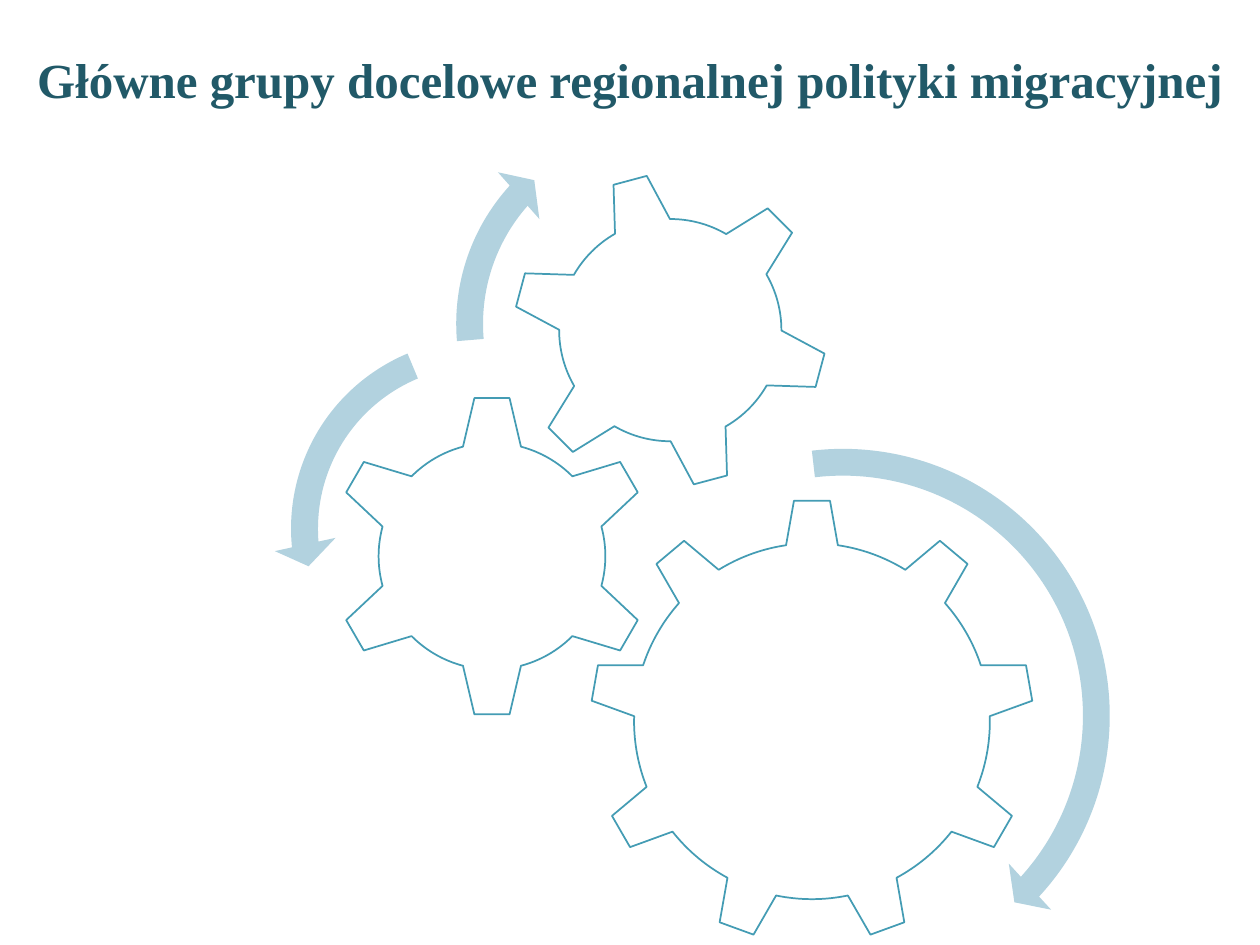
from pptx import Presentation
from pptx.dml.color import RGBColor
from pptx.enum.shapes import MSO_SHAPE
from pptx.enum.text import MSO_ANCHOR, PP_ALIGN
from pptx.util import Inches, Pt

SLIDE_W, SLIDE_H = Inches(10), Inches(7.5)
COLUMN = SLIDE_W / 100  # square grid: 100 columns by 75 rows

TITLE_COLOUR = "215968"
GEAR_FILL, GEAR_EDGE = "FFFFFF", "449CB4"
ARROW_FILL = "B2D2DF"

# Preset, left and top within the wheelwork, size, rotation
GEARS = [
    (MSO_SHAPE.GEAR_9, 25.1, 31.6, 35.3, 0),
    (MSO_SHAPE.GEAR_6, 4.5, 23.3, 25.7, 0),
    (MSO_SHAPE.GEAR_6, 18.9, 5.6, 25.2, -15),
]
# Preset, left and top within the wheelwork, size, adjustments
ARROWS = [
    (MSO_SHAPE.CIRCULAR_ARROW, 22.6, 26.2, 45.2,
     (0.047, 2.99, 25.46, 157.99, 0.055)),
    (MSO_SHAPE.LEFT_CIRCULAR_ARROW, 0, 17.5, 32.9,
     (0.065, 4.3, 104.89, 148.38, 0.075)),
    (MSO_SHAPE.CIRCULAR_ARROW, 13.1, 0, 35.4,
     (0.06, 3.94, 133.14, 105.08, 0.07)),
]


def colour(hex_code):
    return RGBColor.from_string(hex_code)


def grid(*lengths):
    return [round(length * COLUMN) for length in lengths]


def add_title(slide, left, top, width, height):
    title = slide.shapes.add_textbox(*grid(left, top, width, height))
    frame = title.text_frame
    frame.word_wrap = True
    frame.vertical_anchor = MSO_ANCHOR.MIDDLE
    heading = frame.paragraphs[0]
    heading.text = "Główne grupy docelowe regionalnej polityki migracyjnej"
    heading.alignment = PP_ALIGN.CENTER
    heading.font.name = "Times New Roman"
    heading.font.size = Pt(28)
    heading.font.bold = True
    heading.font.color.rgb = colour(TITLE_COLOUR)


def add_part(slide, preset, left, top, size, fill, edge=None):
    part = slide.shapes.add_shape(preset, *grid(left, top, size, size))
    part.shadow.inherit = False
    part.fill.solid()
    part.fill.fore_color.rgb = colour(fill)
    if edge:
        part.line.color.rgb = colour(edge)
        part.line.width = Pt(1)
    else:
        part.line.fill.background()
    return part


def add_wheelwork(slide, left, top):
    # Interlocking gears
    for preset, x, y, size, rotation in GEARS:
        gear = add_part(slide, preset, left + x, top + y, size, GEAR_FILL, GEAR_EDGE)
        gear.rotation = rotation
    # Arrows showing the direction of turn
    for preset, x, y, size, adjustments in ARROWS:
        arrow = add_part(slide, preset, left + x, top + y, size, ARROW_FILL)
        for index, value in enumerate(adjustments):
            arrow.adjustments[index] = value


def main():
    deck = Presentation()
    deck.slide_width, deck.slide_height = SLIDE_W, SLIDE_H
    slide = deck.slides.add_slide(deck.slide_layouts[6])
    add_title(slide, 0, 0, 100, 12.5)
    add_wheelwork(slide, 21.7, 8)
    deck.save("out.pptx")


if __name__ == "__main__":
    main()
